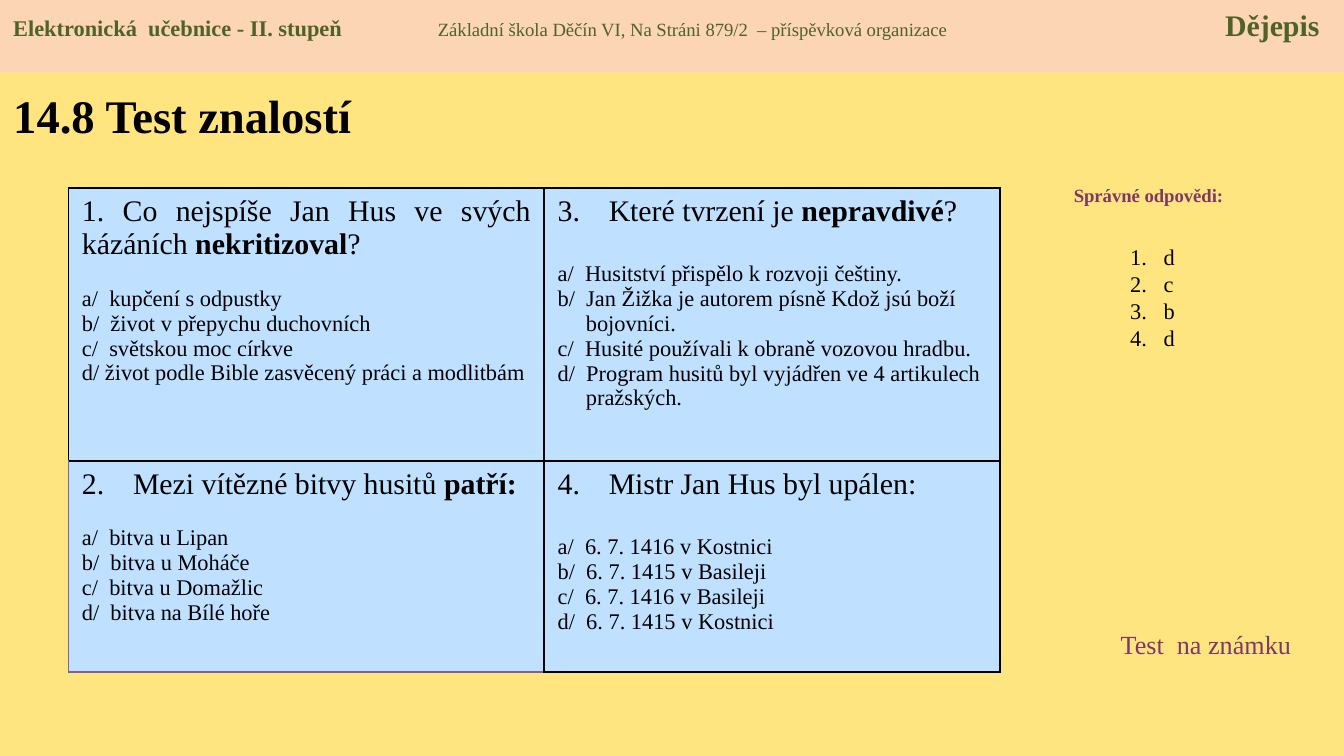
from pptx import Presentation
from pptx.dml.color import RGBColor
from pptx.enum.shapes import MSO_SHAPE
from pptx.enum.text import MSO_ANCHOR, PP_ALIGN
from pptx.oxml.ns import qn
from pptx.util import Inches, Pt
from lxml.etree import SubElement, Element

FONT = "Times New Roman"
COLORS = {"back": "FFE580", "band": "FCD5B5", "green": "4F6228", "plum": "813763",
          "cell": "BFE1FF", "edge": "7D60A0", "ink": "000000"}

# Content: runs are (text, size, bold)
HEADER = [("Elektronická  učebnice - II. stupeň", 12, True),
          ("\tZákladní škola Děčín VI, Na Stráni 879/2  – příspěvková organizace", 10, False),
          ("\tDějepis", 16, True)]
TITLE = "14.8 Test znalostí"
KEY = "Správné odpovědi:"
ANSWERS = ["d", "c", "b", "d"]
NOTE = "Test  na známku"
# Each question: automatic number (or None), heading runs, gap below, options
GRID = [
    [(None, [("1. Co nejspíše Jan Hus ve svých kázáních ", 16, False),
             ("nekritizoval", 16, True), ("?", 16, False)], 13.5,
      ["a/  kupčení s odpustky", "b/  život v přepychu duchovních",
       "c/  světskou moc církve", "d/ život podle Bible zasvěcený práci a modlitbám"]),
     (3, [("Které tvrzení je ", 16, False), ("nepravdivé", 16, True), ("?", 16, False)], 18,
      ["a/  Husitství přispělo k rozvoji češtiny.",
       "b/  Jan Žižka je autorem písně Kdož jsú boží bojovníci.",
       "c/  Husité používali k obraně vozovou hradbu.",
       "d/  Program husitů byl vyjádřen ve 4 artikulech pražských."])],
    [(2, [("Mezi vítězné bitvy husitů ", 16, False), ("patří:", 16, True)], 13.5,
      ["a/  bitva u Lipan", "b/  bitva u Moháče",
       "c/  bitva u Domažlic", "d/  bitva na Bílé hoře"]),
     (4, [("Mistr Jan Hus byl upálen:", 16, False)], 18,
      ["a/  6. 7. 1416 v Kostnici", "b/  6. 7. 1415 v Basileji",
       "c/  6. 7. 1416 v Basileji", "d/  6. 7. 1415 v Kostnici"])],
]
COLS, ROWS = [3.54, 3.39], [2.03, 1.57]


def color(name):
    return RGBColor.from_string(COLORS[name])


def style(font, size, ink="ink", bold=False):
    font.name, font.size, font.bold = FONT, Pt(size), bold
    font.color.rgb = color(ink)


def add_runs(para, runs, ink="ink"):
    for text, size, bold in runs:
        run = para.add_run()
        run.text = text
        style(run.font, size, ink, bold)


def hang(para, width, start=None):
    """Hanging indent, with an automatic number if start is given."""
    props = para._p.get_or_add_pPr()
    props.set("marL", str(Inches(width)))
    props.set("indent", str(-Inches(width)))
    if start:
        SubElement(props, qn("a:buFont"), typeface="+mj-lt")
        SubElement(props, qn("a:buAutoNum"), type="arabicPeriod", startAt=str(start))


def add_text(area, text, size, ink="ink", bold=False):
    box = slide.shapes.add_textbox(*map(Inches, area))
    frame = box.text_frame
    frame.word_wrap = True
    frame.text = text
    for para in frame.paragraphs:
        style(para.font, size, ink, bold)
    return frame


def set_edges(cell, edges):
    props = cell._tc.get_or_add_tcPr()
    for i, (side, (ink, width)) in enumerate(zip("LRTB", edges)):
        line = Element(qn("a:ln" + side), w=str(Pt(width)))
        fill = SubElement(line, qn("a:solidFill"))
        SubElement(fill, qn("a:srgbClr"), val=COLORS[ink])
        props.insert(i, line)


# A 16:9 slide
deck = Presentation()
deck.slide_width, deck.slide_height = Inches(10), Inches(10 * 9 / 16)
slide = deck.slides.add_slide(deck.slide_layouts[6])
slide.background.fill.solid()
slide.background.fill.fore_color.rgb = color("back")

# Title
frame = add_text((0, 0.53, 3.62, 0.65), TITLE, 25, bold=True)
frame.vertical_anchor = MSO_ANCHOR.MIDDLE

# Question table
table = slide.shapes.add_table(2, 2, Inches(0.51), Inches(1.4),
                               Inches(sum(COLS)), Inches(sum(ROWS))).table
for col, width in zip(table.columns, COLS):
    col.width = Inches(width)
for row, height in zip(table.rows, ROWS):
    row.height = Inches(height)
black, violet = ("ink", 1), ("edge", 0.75)
for r, line in enumerate(GRID):
    for c, (start, head, gap, options) in enumerate(line):
        cell = table.cell(r, c)
        cell.fill.solid()
        cell.fill.fore_color.rgb = color("cell")
        corner = (r, c) == (1, 0)
        set_edges(cell, [violet, black, black, violet] if corner else [black] * 4)
        para = cell.text_frame.paragraphs[0]
        para.alignment = PP_ALIGN.JUSTIFY
        para.space_after = Pt(gap)
        add_runs(para, head)
        if start:
            hang(para, 0.38, start)
        for option in options:
            para = cell.text_frame.add_paragraph()
            para.text = option
            style(para.font, 12)
            hang(para, 0.21)

# Answer key
frame = add_text((7.76, 1.32, 1.57, 0.27), KEY, 10, "plum", True)
frame.paragraphs[0].alignment = PP_ALIGN.CENTER
frame = add_text((8.31, 1.76, 0.55, 1.1), "\n".join(ANSWERS), 12)
for para in frame.paragraphs:
    hang(para, 0.25, 1)

# Note
add_text((8.24, 4.63, 1.57, 0.34), NOTE, 14, "plum")

# Header band, with tab stops for its three parts
band = slide.shapes.add_shape(MSO_SHAPE.RECTANGLE, 0, 0, Inches(10), Inches(0.54))
band.shadow.inherit = False
band.fill.solid()
band.fill.fore_color.rgb = color("band")
band.line.fill.background()
band.text_frame.vertical_anchor = MSO_ANCHOR.TOP
para = band.text_frame.paragraphs[0]
para.alignment = PP_ALIGN.LEFT
tabs = SubElement(para._p.get_or_add_pPr(), qn("a:tabLst"))
for place, side in [(3.16, "l"), (9.72, "r")]:
    SubElement(tabs, qn("a:tab"), pos=str(Inches(place)), algn=side)
add_runs(para, HEADER, "green")

deck.save("out.pptx")
